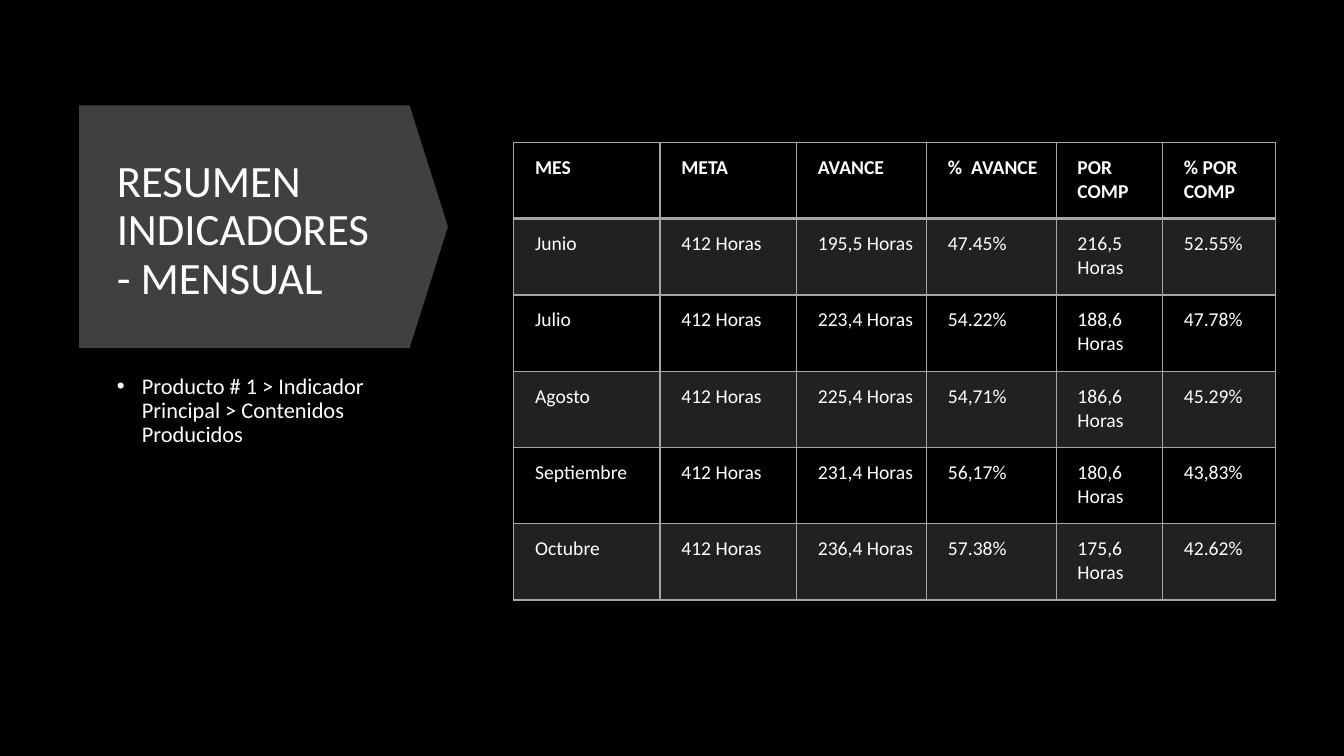
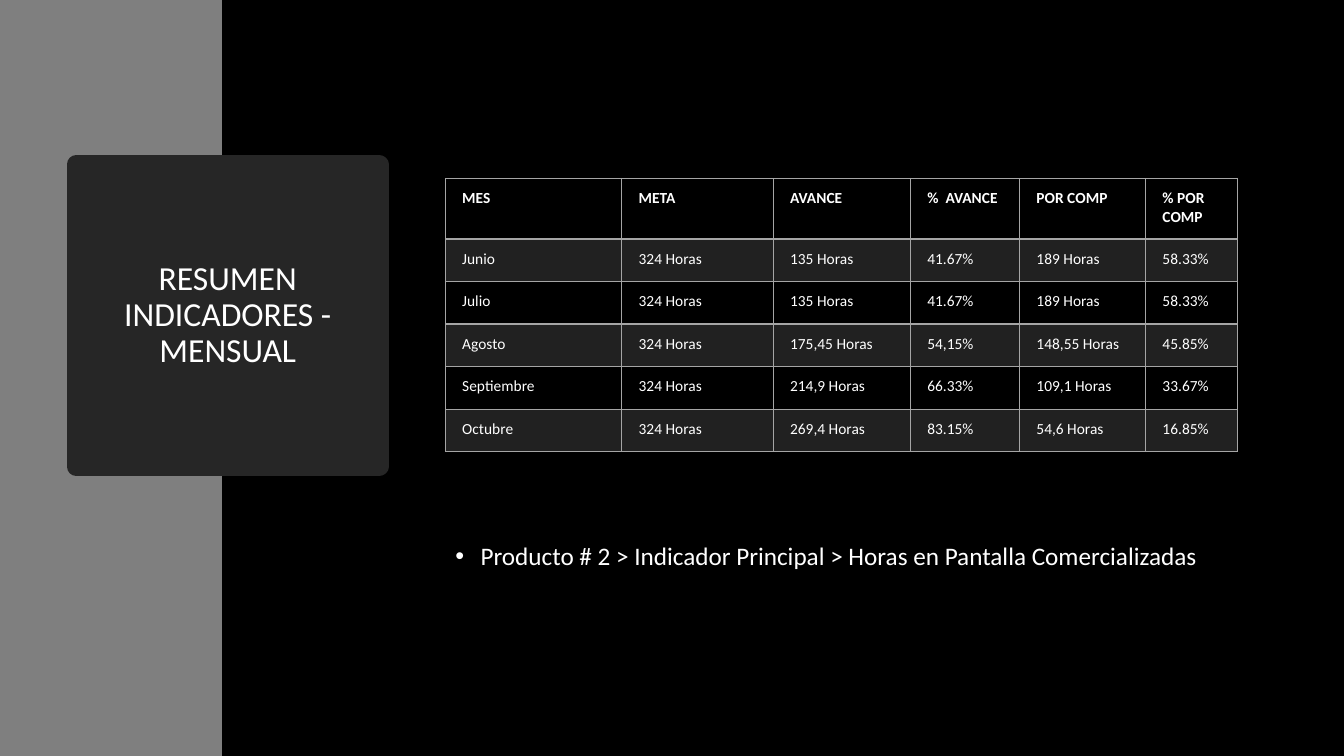
"""Builds two slides that summarise the monthly indicators of two products."""
from lxml import etree
from pptx import Presentation
from pptx import util as u
from pptx.dml.color import RGBColor
from pptx.enum import shapes, text
from pptx.oxml import ns

FONT = "Calibri"
WHITE, BLACK, GRID = "FFFFFF", "000000", "A5A5A5"
ARROW, BAND, CARD = "404040", "7F7F7F", "262626"
TITLE = "RESUMEN INDICADORES - MENSUAL"
HEADINGS = ["MES", "META", "AVANCE", "%  AVANCE", "POR COMP", "% POR COMP"]
MONTHS = ["Junio", "Julio", "Agosto", "Septiembre", "Octubre"]
PARAGRAPH = {"line_spacing": 0.9}
BULLETED = {**PARAGRAPH, "space_before": u.Pt(10)}

products = [
    {
        "title": {"place": (76.3, 95, 210.2, 140.4), "size": 32, "align": text.PP_ALIGN.LEFT},
        "note": {"place": (76.3, 264.2, 210.2, 190.8), "size": 16,
                 "text": "Producto # 1 > Indicador Principal > Contenidos Producidos"},
        "table": {"place": (367, 101.7, 544, 327), "size": 14,
                  "columns": [104.5, 97.5, 93, 92.5, 76, 80.5],
                  "header": 54.5, "row": 54.5, "left": 15.2, "inset": 9.5},
        "goal": "412 Horas",
        "values": [
            ["195,5 Horas", "47.45%", "216,5 Horas", "52.55%"],
            ["223,4 Horas", "54.22%", "188,6 Horas", "47.78%"],
            ["225,4 Horas", "54,71%", "186,6 Horas", "45.29%"],
            ["231,4 Horas", "56,17%", "180,6 Horas", "43,83%"],
            ["236,4 Horas", "57.38%", "175,6 Horas", "42.62%"],
        ],
        "shapes": [
            {"kind": shapes.MSO_SHAPE.DOWN_ARROW, "place": (101.5, 30.2, 173.5, 263.5),
             "color": ARROW, "rotation": 270, "adjustments": [1, 0.158]},
        ],
    },
    {
        "title": {"place": (54.7, 117.4, 216, 216), "size": 24, "align": text.PP_ALIGN.CENTER},
        "note": {"place": (318.2, 384.5, 566, 101.5), "size": 18,
                 "text": "Producto # 2 > Indicador Principal > Horas en Pantalla Comercializadas"},
        "table": {"place": (318.2, 127.5, 566, 195.2), "size": 11,
                  "columns": [126, 108.2, 98, 78, 90, 65.8],
                  "header": 43.2, "row": 30.4, "left": 12, "inset": 7.4},
        "goal": "324 Horas",
        "values": [
            ["135 Horas", "41.67%", "189 Horas", "58.33%"],
            ["135 Horas", "41.67%", "189 Horas", "58.33%"],
            ["175,45 Horas", "54,15%", "148,55 Horas", "45.85%"],
            ["214,9 Horas", "66.33%", "109,1 Horas", "33.67%"],
            ["269,4 Horas", "83.15%", "54,6 Horas", "16.85%"],
        ],
        "shapes": [
            {"kind": shapes.MSO_SHAPE.RECTANGLE, "place": (0, 0, 158.6, 540), "color": BAND},
            {"kind": shapes.MSO_SHAPE.RECTANGLE, "place": (54.7, 117.4, 216, 216),
             "color": CARD, "line": 13.75},
        ],
    },
]


def paint(target, color):
    """Give a fill or a line fill one solid colour."""
    target.solid()
    target.fore_color.rgb = RGBColor.from_string(color)


def write(frame, words, size, bold=False, formats=None):
    """Set the only paragraph of a text frame and return it."""
    frame.word_wrap = True
    para = frame.paragraphs[0]
    for name, value in (formats or {}).items():
        setattr(para, name, value)
    span = para.add_run()
    span.text = words
    for name, value in {"name": FONT, "size": u.Pt(size), "bold": bold}.items():
        setattr(span.font, name, value)
    paint(span.font.fill, WHITE)
    return para


deck = Presentation()
deck.slide_width, deck.slide_height = u.Pt(960), u.Pt(540)

for product in products:
    page = deck.slides.add_slide(deck.slide_layouts[6])
    paint(page.background.fill, BLACK)

    for item in product["shapes"]:
        shape = page.shapes.add_shape(item["kind"], *map(u.Pt, item["place"]))
        shape.shadow.inherit = False
        shape.rotation = item.get("rotation", 0)
        for index, value in enumerate(item.get("adjustments", [])):
            shape.adjustments[index] = value
        paint(shape.fill, item["color"])
        if "line" in item:
            paint(shape.line.fill, item["color"])
            shape.line.width = u.Pt(item["line"])
            etree.SubElement(shape.line.fill._xPr, ns.qn("a:round"))
        else:
            shape.line.fill.background()

    title = product["title"]
    box = page.shapes.add_textbox(*map(u.Pt, title["place"]))
    box.text_frame.vertical_anchor = text.MSO_ANCHOR.MIDDLE
    write(box.text_frame, TITLE, title["size"],
          formats={**PARAGRAPH, "alignment": title["align"]})

    note = product["note"]
    box = page.shapes.add_textbox(*map(u.Pt, note["place"]))
    para = write(box.text_frame, note["text"], note["size"], formats=BULLETED)
    properties = para._p.get_or_add_pPr()
    properties.set("marL", str(u.Pt(18)))
    properties.set("indent", str(u.Pt(-18)))
    etree.SubElement(properties, ns.qn("a:buFont"), typeface="Arial")
    etree.SubElement(properties, ns.qn("a:buChar"), char="•")

    style = product["table"]
    rows = [HEADINGS] + [[month, product["goal"], *values]
                         for month, values in zip(MONTHS, product["values"])]
    table = page.shapes.add_table(len(rows), len(HEADINGS), *map(u.Pt, style["place"])).table
    table.first_row = table.horz_banding = False
    for column, width in zip(table.columns, style["columns"]):
        column.width = u.Pt(width)
    margins = {"margin_left": style["left"], "margin_right": style["inset"],
               "margin_top": style["inset"], "margin_bottom": style["inset"]}
    for row_number, row in enumerate(rows):
        table.rows[row_number].height = u.Pt(style["row"] if row_number else style["header"])
        for column_number, words in enumerate(row):
            cell = table.cell(row_number, column_number)
            for name, value in margins.items():
                setattr(cell, name, u.Pt(value))
            write(cell.text_frame, words, style["size"], bold=row_number == 0)
            properties = cell._tc.get_or_add_tcPr()
            for side in "LRTB":
                thick = (row_number, side) in [(0, "B"), (1, "T")]
                border = etree.SubElement(properties, ns.qn(f"a:ln{side}"),
                                          w=str(u.Pt(2 if thick else 1)))
                solid = etree.SubElement(border, ns.qn("a:solidFill"))
                etree.SubElement(solid, ns.qn("a:srgbClr"), val=GRID)
            if row_number % 2:
                paint(cell.fill, GRID)
                color = properties.find(ns.qn("a:solidFill"))[0]
                etree.SubElement(color, ns.qn("a:alpha"), val="20000")
            else:
                cell.fill.background()

deck.save("out.pptx")
